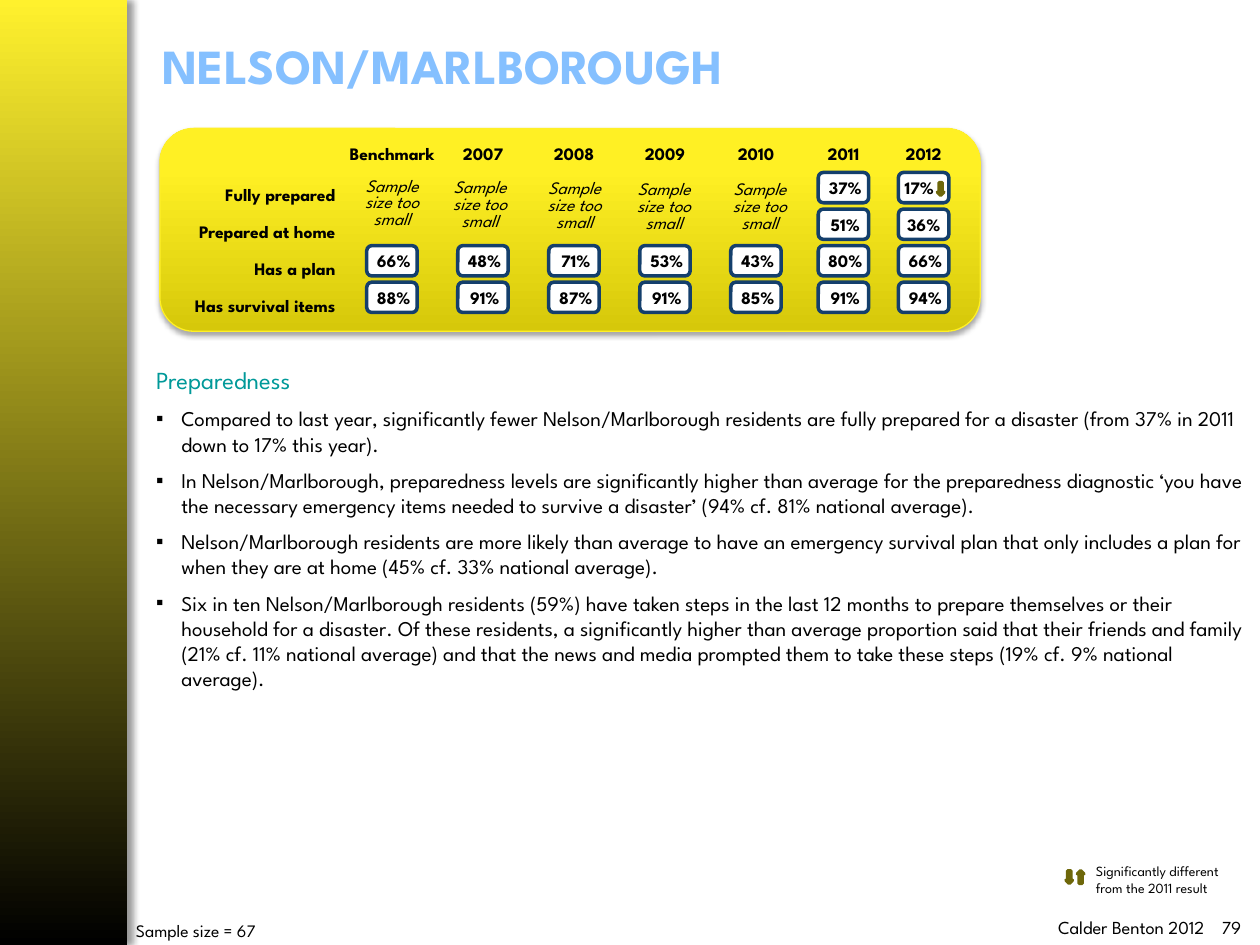
import pptx
import pptx.chart.data
import pptx.dml.color
import pptx.enum.shapes
import pptx.enum.text
import pptx.oxml
import pptx.oxml.ns
import pptx.util

Pt = pptx.util.Pt
SHAPE = pptx.enum.shapes.MSO_SHAPE
ALIGN = pptx.enum.text.PP_ALIGN
ANCHOR = pptx.enum.text.MSO_ANCHOR
FONT = "League Spartan"
NAMESPACE = pptx.oxml.ns.nsdecls("a")

ROW_LABELS = ["Fully prepared", "Prepared at home", "Has a plan", "Has survival items"]
COLUMNS = [
    ("Benchmark", 132.6, ["66%", "88%"]),
    ("2007", 184.6, ["48%", "91%"]),
    ("2008", 236.6, ["71%", "87%"]),
    ("2009", 288.6, ["53%", "91%"]),
    ("2010", 340.6, ["43%", "85%"]),
    ("2011", 390.6, ["37%", "51%", "80%", "91%"]),
    ("2012", 436.4, ["17%", "36%", "66%", "94%"]),
]
SMALL_SAMPLES = [(132.6, 25.2), (182.9, 26), (236.9, 26.7), (288, 27.4), (342.8, 27.4)]
FINDINGS = [
    "Compared to last year, significantly fewer Nelson/Marlborough residents are fully "
    "prepared for a disaster (from 37% in 2011 down to 17% this year).",
    "In Nelson/Marlborough, preparedness levels are significantly higher than average for "
    "the preparedness diagnostic ‘you have the necessary emergency items needed to survive "
    "a disaster’ (94% cf. 81% national average).",
    "Nelson/Marlborough residents are more likely than average to have an emergency survival "
    "plan that only includes a plan for when they are at home (45% cf. 33% national average).",
    "Six in ten Nelson/Marlborough residents (59%) have taken steps in the last 12 months to "
    "prepare themselves or their household for a disaster. Of these residents, a "
    "significantly higher than average proportion said that their friends and family (21% "
    "cf. 11% national average) and that the news and media prompted them to take these steps "
    "(19% cf. 9% national average).",
]


def color(value):
    """Turn a hex string into a colour."""
    return pptx.dml.color.RGBColor.from_string(value)


def style(para, size, hex_color="000000", bold=False, italic=False):
    """Set the font of a paragraph."""
    para.font.name = FONT
    para.font.size = Pt(size)
    para.font.bold = bold
    para.font.italic = italic
    para.font.color.rgb = color(hex_color)


def place(item, left, top, width, height):
    """Move and size an item."""
    item.left, item.top, item.width, item.height = Pt(left), Pt(top), Pt(width), Pt(height)


def add_text(page, box, text, size=10, align=ALIGN.LEFT, spacing=None, **looks):
    """Add a wrapped text box with one paragraph and return the paragraph."""
    frame = page.shapes.add_textbox(*map(Pt, box)).text_frame
    frame.word_wrap = True
    para = frame.paragraphs[0]
    para.text = text
    para.alignment = align
    para.line_spacing = spacing
    style(para, size, **looks)
    return para


def add_figure(page, kind, box, fill=None, line=None, line_width=0.75):
    """Add a preset shape without a shadow."""
    figure = page.shapes.add_shape(kind, *map(Pt, box))
    figure.shadow.inherit = False
    if fill:
        figure.fill.solid()
        figure.fill.fore_color.rgb = color(fill)
    if line:
        figure.line.color.rgb = color(line)
        figure.line.width = Pt(line_width)
    else:
        figure.line.fill.background()
    return figure


def add_gradient(figure, angle, stops):
    """Fill a figure with a linear gradient of two stops."""
    figure.fill.gradient()
    figure.fill.gradient_angle = angle
    for stop, (position, value) in zip(figure.fill.gradient_stops, stops):
        stop.position = position
        stop.color.rgb = color(value)


def add_shadow(figure, alpha, blur, distance, direction):
    """Give a figure a soft black outer shadow."""
    effects = figure.element.spPr.find(pptx.oxml.ns.qn("a:effectLst"))
    effects.append(pptx.oxml.parse_xml(
        f'<a:outerShdw {NAMESPACE} blurRad="{Pt(blur)}" dist="{Pt(distance)}" '
        f'dir="{direction * 60000}" rotWithShape="0"><a:srgbClr val="000000">'
        f'<a:alpha val="{alpha * 1000}"/></a:srgbClr></a:outerShdw>'))


def add_arrow(page, left, top, rotation=0):
    """Add a small significance arrow."""
    arrow = add_figure(page, SHAPE.UP_ARROW, (left, top, 3.6, 7.2), "958B0D", "6E670A", 2)
    arrow.rotation = rotation


def add_score(page, left, top, text, shift):
    """Add a white score pill whose text is shifted sideways."""
    pill = add_figure(page, SHAPE.ROUNDED_RECTANGLE, (left, top, 28.8, 17.3),
                      "FFFFFF", "143F6C", 2)
    frame = pill.text_frame
    frame.word_wrap = False
    frame.vertical_anchor = ANCHOR.MIDDLE
    frame.margin_top = frame.margin_bottom = 0
    frame.margin_left = Pt(max(0, 2 * shift))
    frame.margin_right = Pt(max(0, -2 * shift))
    para = frame.paragraphs[0]
    para.text = text
    para.alignment = ALIGN.CENTER
    style(para, 10, bold=True)


def add_sidebar(page, box):
    """Add the yellow to black bar."""
    bar = add_figure(page, SHAPE.RECTANGLE, box)
    add_gradient(bar, 270, [(0, "FFF12D"), (1, "000000")])
    add_shadow(bar, 40, 4, 3, 0)


def add_score_panel(page, box):
    """Add the yellow panel with its labels, years and scores."""
    left, top = box[:2]
    panel = add_figure(page, SHAPE.ROUNDED_RECTANGLE, box, line="FFF027")
    add_gradient(panel, 90, [(0, "D6C80A"), (0.8, "FFF024")])
    add_shadow(panel, 35, 3.1, 1.8, 90)
    for row, label in enumerate(ROW_LABELS):
        add_text(page, (left + 3.6, top + 30.3 + 21.2 * row, 103.7, 17), label,
                 align=ALIGN.RIGHT, spacing=0.8, bold=True)
    for heading, center, scores in COLUMNS:
        add_text(page, (left + center - 35, top + 5, 70, 19), heading,
                 align=ALIGN.CENTER, bold=True)
        first_row = len(ROW_LABELS) - len(scores)
        for row, score in enumerate(scores, first_row):
            shift = {"17%": -2.5, "36%": 0}.get(score, 1)
            add_score(page, left + center - 14.4, top + 25.2 + 20.9 * row, score, shift)
    for center, offset in SMALL_SAMPLES:
        add_text(page, (left + center - 30.2, top + offset, 60.5, 36),
                 "Sample size too small", align=ALIGN.CENTER, spacing=0.8, italic=True)
    add_arrow(page, left + 444.3, top + 31, 180)


def add_title(page, box):
    """Fill the title placeholder."""
    title = page.shapes.title
    place(title, *box)
    frame = title.text_frame
    frame.text = "NELSON/MARLBOROUGH"
    frame.vertical_anchor = ANCHOR.MIDDLE
    frame.paragraphs[0].alignment = ALIGN.LEFT
    style(frame.paragraphs[0], 28, "85C0FF", bold=True)


def add_findings(page, box):
    """Fill the body placeholder with a heading and a bulleted list."""
    body = page.placeholders[1]
    place(body, *box)
    frame = body.text_frame
    frame.auto_size = pptx.enum.text.MSO_AUTO_SIZE.NONE
    frame.text = "\n".join(["Preparedness"] + FINDINGS)
    for index, para in enumerate(frame.paragraphs):
        properties = para._p.get_or_add_pPr()
        properties.set("marL", str(Pt(14.4)))
        properties.set("indent", str(Pt(-14.4)))
        bullet = '<a:buChar {} char="▪"/>' if index else "<a:buNone {}/>"
        properties.append(pptx.oxml.parse_xml(bullet.format(NAMESPACE)))
        para.space_before = Pt(6.3 if index else 0)
        style(para, 12 if index else 14, "000000" if index else "009999")


def add_legend(page, box):
    """Add the key to the significance arrows."""
    left, top, width, height = box
    add_arrow(page, left, top + 8, 180)
    add_arrow(page, left + 6.5, top + 8)
    add_text(page, (left + 10, top, width - 10, height),
             "Significantly different from the 2011 result", 8)


def add_footer(page, box):
    """Add the source and page number, each set against a right tab."""
    para = add_text(page, box, "\tCalder Benton 2012\t79", 10.5)
    tabs = "".join(f'<a:tab pos="{Pt(stop)}" algn="r"/>' for stop in (219, 240))
    para._p.get_or_add_pPr().insert(
        0, pptx.oxml.parse_xml(f"<a:tabLst {NAMESPACE}>{tabs}</a:tabLst>"))


def main():
    """Build the deck."""
    deck = pptx.Presentation()
    deck.slide_width, deck.slide_height = Pt(720), Pt(540)
    page = deck.slides.add_slide(deck.slide_layouts[1])
    add_footer(page, (462.2, 519.8, 254.9, 21))
    add_sidebar(page, (0, 0, 72.7, 540))
    add_score_panel(page, (91.4, 73.4, 468.7, 115.9))
    add_title(page, (85.7, 10, 649.4, 54))
    add_findings(page, (82, 205.2, 638, 213))
    add_text(page, (70.6, 522, 146, 19), "Sample size = 67")
    add_legend(page, (609.2, 489.6, 110.8, 26.6))
    deck.save("out.pptx")


if __name__ == "__main__":
    main()
